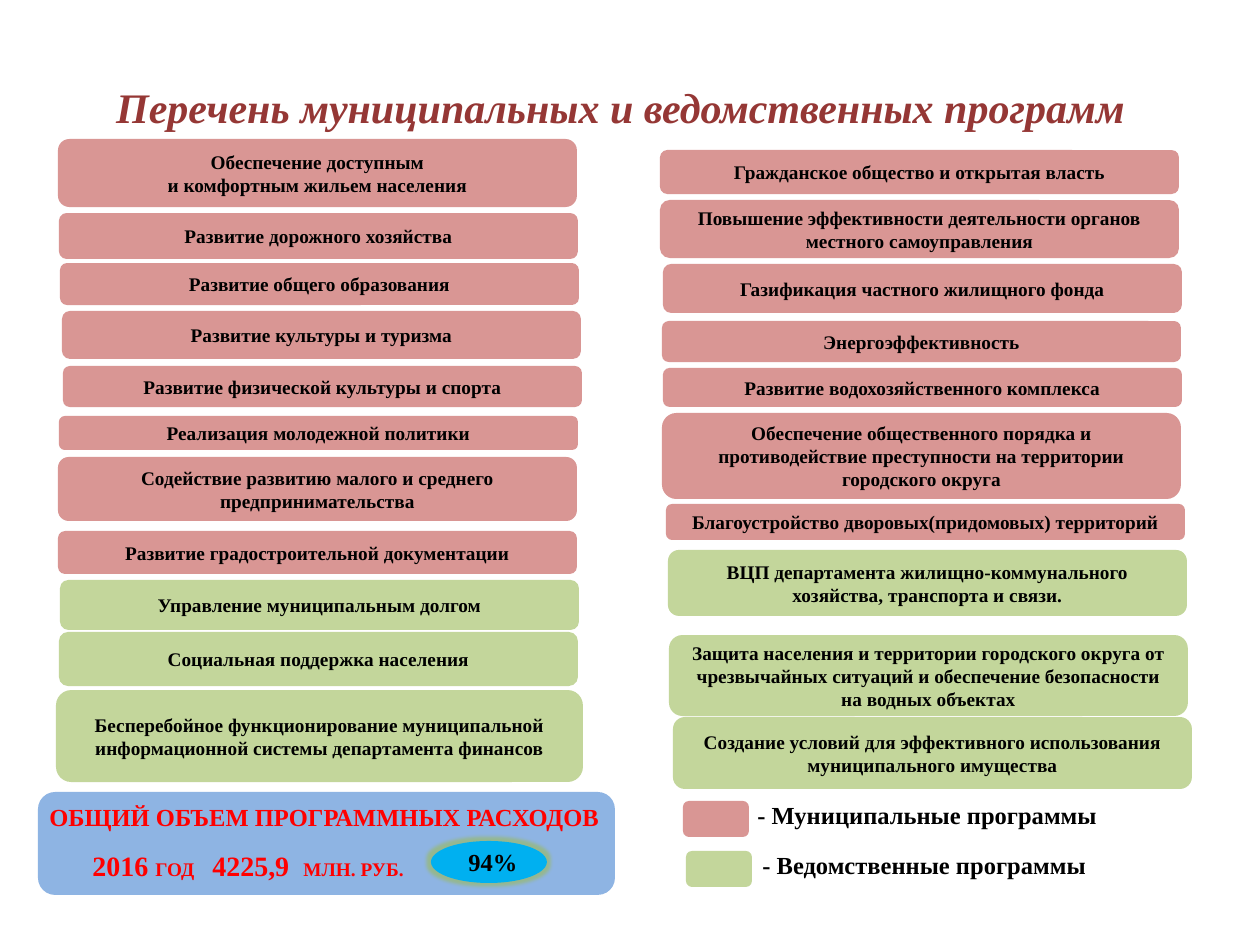
from lxml import etree
from pptx import Presentation
from pptx import util as u
from pptx.dml.color import RGBColor
from pptx.enum import shapes, text
from pptx.oxml import ns

PX = 914400 / 126
FONT = "Times New Roman"
MUNICIPAL, DEPARTMENTAL = "D99694", "C3D69B"
BLACK, RED = "000000", "FF0000"
CARD = shapes.MSO_SHAPE.FLOWCHART_ALTERNATE_PROCESS
LEFT, CENTER, RIGHT = text.PP_ALIGN.LEFT, text.PP_ALIGN.CENTER, text.PP_ALIGN.RIGHT
TOP, MIDDLE = text.MSO_ANCHOR.TOP, text.MSO_ANCHOR.MIDDLE

LEFT_PROGRAMS = [
    (0, 0, 519, 68, MUNICIPAL, "Обеспечение доступным\nи комфортным жильем населения"),
    (1, 74, 519, 46, MUNICIPAL, "Развитие дорожного хозяйства"),
    (2, 124, 519, 42, MUNICIPAL, "Развитие общего образования"),
    (4, 172, 519, 48, MUNICIPAL, "Развитие культуры и туризма"),
    (5, 227, 519, 41, MUNICIPAL, "Развитие физической культуры и спорта"),
    (1, 277, 519, 34, MUNICIPAL, "Реализация молодежной политики"),
    (0, 318, 519, 64, MUNICIPAL, "Содействие развитию малого и среднего предпринимательства"),
    (0, 392, 519, 43, MUNICIPAL, "Развитие градостроительной документации"),
    (2, 441, 519, 50, DEPARTMENTAL, "Управление муниципальным долгом"),
    (1, 493, 519, 54, DEPARTMENTAL, "Социальная поддержка населения"),
    (-2, 551, 527, 92, DEPARTMENTAL,
     "Бесперебойное функционирование муниципальной информационной системы департамента финансов"),
]
RIGHT_PROGRAMS = [
    (0, 0, 519, 44, MUNICIPAL, "Гражданское общество и открытая власть"),
    (0, 50, 519, 58, MUNICIPAL, "Повышение эффективности деятельности органов местного самоуправления"),
    (3, 114, 519, 49, MUNICIPAL, "Газификация частного жилищного фонда"),
    (2, 171, 519, 41, MUNICIPAL, "Энергоэффективность"),
    (3, 218, 519, 39, MUNICIPAL, "Развитие водохозяйственного комплекса"),
    (2, 263, 519, 86, MUNICIPAL,
     "Обеспечение общественного порядка и противодействие преступности на территории городского округа"),
    (6, 354, 519, 36, MUNICIPAL, "Благоустройство дворовых(придомовых) территорий"),
    (8, 400, 519, 66, DEPARTMENTAL,
     "ВЦП департамента жилищно-коммунального хозяйства, транспорта и связи."),
    (9, 485, 519, 81, DEPARTMENTAL,
     "Защита населения и территории городского округа от чрезвычайных ситуаций "
     "и обеспечение безопасности на водных объектах"),
    (13, 567, 519, 72, DEPARTMENTAL,
     "Создание условий для эффективного использования муниципального имущества"),
]


def px(*lengths):
    """Turn pixel lengths into EMU."""
    return [u.Emu(round(length * PX)) for length in lengths]


def rgb(value):
    """Turn a hex string into a colour."""
    return RGBColor.from_string(value)


def write(holder, content, size=11, color=BLACK, align=CENTER, anchor=MIDDLE, italic=False, tabs=()):
    """Write text, or a list of (text, size) runs, into a shape in one format."""
    frame = holder.text_frame
    frame.word_wrap = True
    frame.auto_size = text.MSO_AUTO_SIZE.NONE
    frame.vertical_anchor = anchor
    lines = [[(line, size)] for line in content.split("\n")] if isinstance(content, str) else [content]
    for index, runs in enumerate(lines):
        paragraph = frame.add_paragraph() if index else frame.paragraphs[0]
        paragraph.alignment = align
        if tabs:
            stops = etree.SubElement(paragraph._p.get_or_add_pPr(), ns.qn("a:tabLst"))
            for stop in px(*tabs):
                etree.SubElement(stops, ns.qn("a:tab"), pos=str(stop), algn="l")
        for words, points in runs:
            run = paragraph.add_run()
            run.text = words
            font = run.font
            font.name, font.size, font.bold, font.italic = FONT, u.Pt(points), True, italic
            font.color.rgb = rgb(color)


def add_block(slide, kind, box, fill):
    """Add a plain filled shape without line or shadow."""
    block = slide.shapes.add_shape(kind, *px(*box))
    block.shadow.inherit = False
    block.fill.solid()
    block.fill.fore_color.rgb = rgb(fill)
    block.line.fill.background()
    return block


def add_label(slide, box, content, **style):
    """Add a text box."""
    write(slide.shapes.add_textbox(*px(*box)), content, **style)


def add_glow(block, color, radius):
    """Surround a shape with a soft glow."""
    effects = block._element.spPr.find(ns.qn("a:effectLst"))
    glow = etree.SubElement(effects, ns.qn("a:glow"), rad=str(px(radius)[0]))
    tint = etree.SubElement(glow, ns.qn("a:srgbClr"), val=color)
    etree.SubElement(tint, ns.qn("a:alpha"), val="60000")


def place_title(slide, box):
    """Move and format the title placeholder."""
    title = slide.shapes.title
    title.left, title.top, title.width, title.height = px(*box)
    write(title, "Перечень муниципальных и ведомственных программ",
          size=24, color="953735", italic=True)


def add_programs(slide, left, top, programs):
    """Stack the program cards of one column."""
    for dx, dy, width, height, fill, name in programs:
        write(add_block(slide, CARD, (left + dx, top + dy, width, height), fill), name)


def add_total(slide, left, top, width, height):
    """Draw the panel with total program spending."""
    add_block(slide, shapes.MSO_SHAPE.ROUNDED_RECTANGLE, (left, top, width, height), "8EB4E3")
    add_label(slide, (left + 42, top + 50, 400, 46),
              [("2016 ", 16), ("ГОД", 11), ("\t4225,9", 16), ("\tМЛН. РУБ.", 11)],
              color=RED, align=LEFT, anchor=TOP, tabs=(120, 211))
    add_label(slide, (left - 1, top + 4, 588, 43), "ОБЩИЙ ОБЪЕМ ПРОГРАММНЫХ РАСХОДОВ",
              size=14, color=RED, align=LEFT, anchor=TOP)
    share = add_block(slide, shapes.MSO_SHAPE.OVAL, (left + 393, top + 49, 116, 42), "00B0F0")
    add_glow(share, "9BBB59", 7)
    write(share, "94%", size=14, align=RIGHT)


def add_legend(slide, left, top):
    """Explain the two card colours."""
    entries = [(0, 0, 62, MUNICIPAL, "- Муниципальные программы"),
               (3, 50, 64, DEPARTMENTAL, "- Ведомственные программы")]
    for dx, dy, gap, fill, name in entries:
        add_block(slide, CARD, (left + dx, top + dy, 66, 36), fill)
        add_label(slide, (left + dx + gap, top + dy - 7, 393, 43), name,
                  size=14, align=LEFT, anchor=TOP)


def main():
    """Build and save the slide."""
    deck = Presentation()
    deck.slide_width, deck.slide_height = px(1260, 945)
    slide = deck.slides.add_slide(deck.slide_layouts[5])
    place_title(slide, (55, 73, 1131, 68))
    add_programs(slide, 58, 139, LEFT_PROGRAMS)
    add_programs(slide, 660, 150, RIGHT_PROGRAMS)
    add_total(slide, 38, 792, 577, 103)
    add_legend(slide, 683, 801)
    deck.save("out.pptx")


if __name__ == "__main__":
    main()
